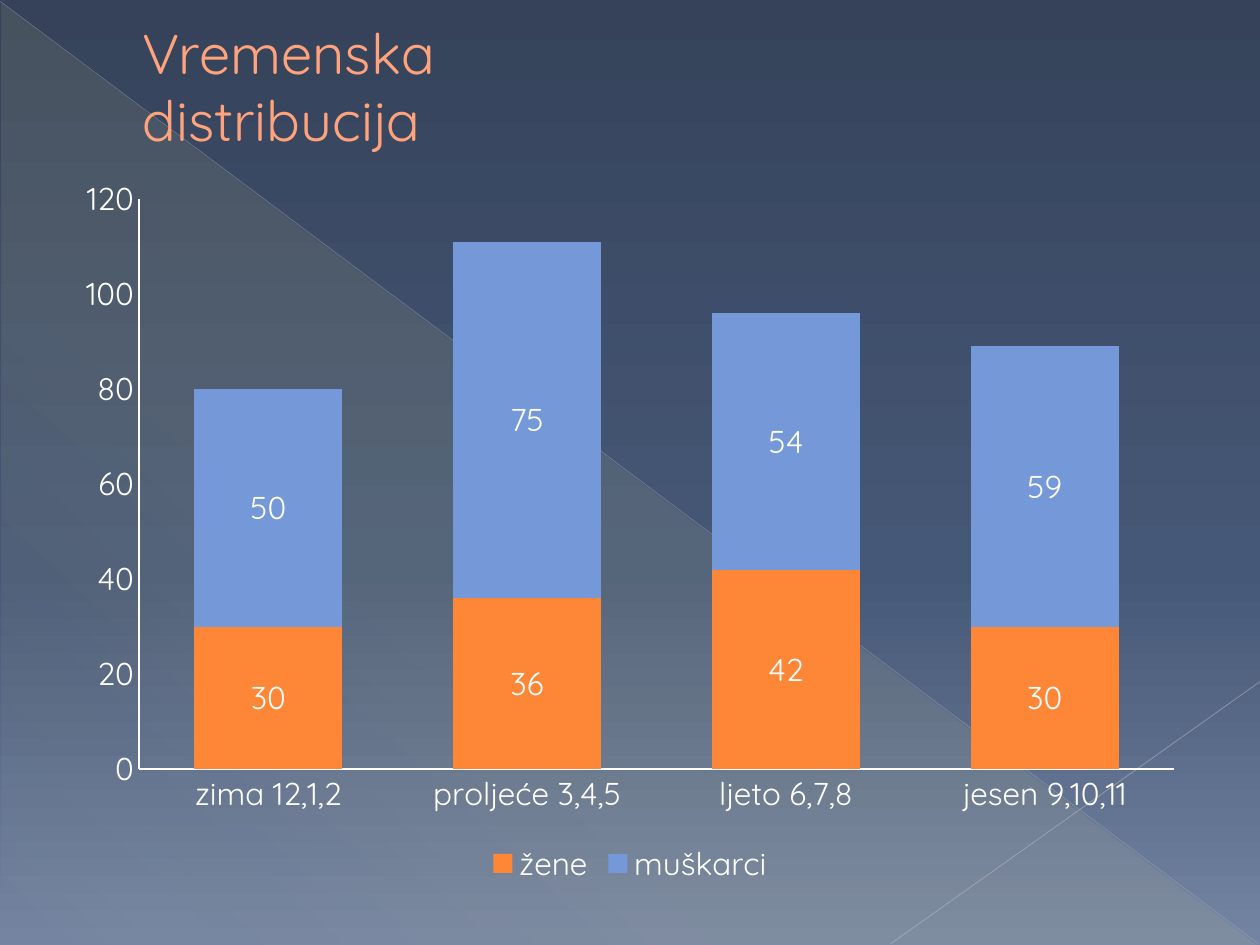
from dataclasses import dataclass
from typing import NamedTuple

from lxml import etree
from pptx import Presentation
from pptx.chart.data import CategoryChartData
from pptx.dml.color import RGBColor
from pptx.enum.chart import XL_CHART_TYPE, XL_LABEL_POSITION, XL_LEGEND_POSITION, XL_TICK_MARK
from pptx.enum.shapes import MSO_CONNECTOR, MSO_SHAPE
from pptx.enum.text import MSO_ANCHOR, MSO_AUTO_SIZE, PP_ALIGN
from pptx.oxml.ns import qn
from pptx.util import Inches, Pt

STACKED = XL_CHART_TYPE.COLUMN_STACKED
CENTER_LABEL = XL_LABEL_POSITION.CENTER
BOTTOM = XL_LEGEND_POSITION.BOTTOM
NO_TICKS = XL_TICK_MARK.NONE
STRAIGHT = MSO_CONNECTOR.STRAIGHT
RIGHT_TRIANGLE = MSO_SHAPE.RIGHT_TRIANGLE
MIDDLE = MSO_ANCHOR.MIDDLE
NO_AUTOFIT = MSO_AUTO_SIZE.NONE
LEFT = PP_ALIGN.LEFT
TITLE_ONLY = 5


class Stop(NamedTuple):
    position: int
    color: str
    opacity: int = 100


class Ray(NamedTuple):
    start: tuple[float, float]
    end: tuple[float, float]
    color: str
    width: float
    opacity: int


class Series(NamedTuple):
    name: str
    values: tuple[int, ...]
    color: str


@dataclass(frozen=True)
class Theme:
    font: str = "Quicksand"
    title_size: int = 32
    chart_size: int = 18
    title: str = "FFA37C"
    title_outline: str = "B05D26"
    text: str = "FFFFFF"
    background: tuple[Stop, ...] = (Stop(0, "35425A"), Stop(60, "465877"), Stop(100, "7383A2"))
    triangle: tuple[Stop, ...] = (
        Stop(0, "FFF39D", 10), Stop(70, "FFF39D", 8), Stop(100, "FFF39D", 1))


THEME = Theme()
RAYS = (
    Ray((0, 0.01), (9.99, 7.49), "BABDC4", 0.39, 35),
    Ray((10, 5.41), (7.07, 7.49), "C1C4CA", 0.47, 45),
)
SEASONS = ("zima 12,1,2", "proljeće 3,4,5", "ljeto 6,7,8", "jesen 9,10,11")
SERIES = (
    Series("žene", (30, 36, 42, 30), "FE8637"),
    Series("muškarci", (50, 75, 54, 59), "7598D9"),
)
PLOT_LAYOUT = {"x": 0.067, "y": 0.047, "w": 0.913, "h": 0.787}


def rgb(color: str) -> RGBColor:
    return RGBColor.from_string(color)


def add_color(parent, color: str, opacity: int = 100) -> None:
    element = etree.SubElement(parent, qn("a:srgbClr"), val=color)
    if opacity < 100:
        etree.SubElement(element, qn("a:alpha"), val=str(opacity * 1000))


def set_gradient(fill, owner, stops: tuple[Stop, ...], clockwise_angle: int) -> None:
    """Fill with any number of stops; owner is the XML element holding the fill."""
    fill.gradient()
    fill.gradient_angle = 360 - clockwise_angle
    stop_list = next(owner.iter(qn("a:gsLst")))
    for old_stop in list(stop_list):
        stop_list.remove(old_stop)
    for stop in stops:
        element = etree.SubElement(stop_list, qn("a:gs"), pos=str(stop.position * 1000))
        add_color(element, stop.color, stop.opacity)


def add_triangle(slide) -> None:
    triangle = slide.shapes.add_shape(
        RIGHT_TRIANGLE, Inches(0.01), Inches(0.02), Inches(9.98), Inches(7.48))
    triangle.shadow.inherit = False
    triangle.line.fill.background()
    set_gradient(triangle.fill, triangle._element.spPr, THEME.triangle, 133)


def add_ray(slide, ray: Ray) -> None:
    points = [Inches(value) for value in ray.start + ray.end]
    connector = slide.shapes.add_connector(STRAIGHT, *points)
    connector.line.width = Pt(ray.width)
    connector.line.color.rgb = rgb(ray.color)
    properties = connector._element.spPr
    color = next(properties.iter(qn("a:srgbClr")))
    etree.SubElement(color, qn("a:alpha"), val=str(ray.opacity * 1000))
    etree.SubElement(properties, qn("a:effectLst"))


def format_title(slide) -> None:
    title = slide.shapes.title
    slide.shapes._spTree.append(title._element)  # in front of the backdrop
    title.left, title.top = Inches(0.5), Inches(0.29)
    title.width, title.height = Inches(3.48), Inches(0.78)
    frame = title.text_frame
    frame.word_wrap = True
    frame.auto_size = NO_AUTOFIT
    frame.vertical_anchor = MIDDLE
    paragraph = frame.paragraphs[0]
    paragraph.alignment = LEFT
    properties = paragraph._p.get_or_add_pPr()
    properties.set("marL", str(Inches(0.53)))
    properties.set("indent", "0")
    run = paragraph.add_run()
    run.text = "Vremenska distribucija"
    run.font.name = THEME.font
    run.font.size = Pt(THEME.title_size)
    run.font.color.rgb = rgb(THEME.title)
    outline = etree.Element(qn("a:ln"), w=str(Pt(0.5)))
    add_color(etree.SubElement(outline, qn("a:solidFill")), THEME.title_outline)
    run._r.get_or_add_rPr().insert(0, outline)


def set_plot_layout(chart) -> None:
    """Pin the inner plot area to fractions of the chart's size."""
    plot_area = chart._chartSpace.chart.plotArea
    for old_layout in plot_area.findall(qn("c:layout")):
        plot_area.remove(old_layout)
    layout = etree.Element(qn("c:layout"))
    manual = etree.SubElement(layout, qn("c:manualLayout"))
    settings = {"layoutTarget": "inner", "xMode": "edge", "yMode": "edge", **PLOT_LAYOUT}
    for name, value in settings.items():
        etree.SubElement(manual, qn(f"c:{name}"), val=str(value))
    plot_area.insert(0, layout)


def add_season_chart(slide) -> None:
    data = CategoryChartData()
    data.categories = SEASONS
    for series in SERIES:
        data.add_series(series.name, series.values)
    chart = slide.shapes.add_chart(
        STACKED, Inches(0.5), Inches(1.31), Inches(9), Inches(5.75), data).chart
    chart.font.name = THEME.font
    chart.font.size = Pt(THEME.chart_size)
    chart.font.color.rgb = rgb(THEME.text)
    chart.has_title = False
    chart.has_legend = True
    chart.legend.position = BOTTOM
    chart.legend.include_in_layout = False

    for axis in (chart.category_axis, chart.value_axis):
        axis.major_tick_mark = axis.minor_tick_mark = NO_TICKS
        axis.has_major_gridlines = False
        axis.format.line.color.rgb = rgb(THEME.text)
        axis.format.line.width = Pt(0.75)
    chart.value_axis.minimum_scale = 0
    chart.value_axis.maximum_scale = 120
    chart.value_axis.major_unit = 20

    plot = chart.plots[0]
    plot.gap_width, plot.overlap = 75, 100
    plot.vary_by_categories = False
    for drawn, series in zip(plot.series, SERIES):
        drawn.format.fill.solid()
        drawn.format.fill.fore_color.rgb = rgb(series.color)
        drawn.data_labels.show_value = True
        drawn.data_labels.position = CENTER_LABEL
    set_plot_layout(chart)


def main() -> None:
    presentation = Presentation()
    presentation.slide_width, presentation.slide_height = Inches(10), Inches(7.5)
    slide = presentation.slides.add_slide(presentation.slide_layouts[TITLE_ONLY])
    set_gradient(slide.background.fill, slide._element, THEME.background, 90)
    add_triangle(slide)
    for ray in RAYS:
        add_ray(slide, ray)
    format_title(slide)
    add_season_chart(slide)
    presentation.save("out.pptx")


if __name__ == "__main__":
    main()
